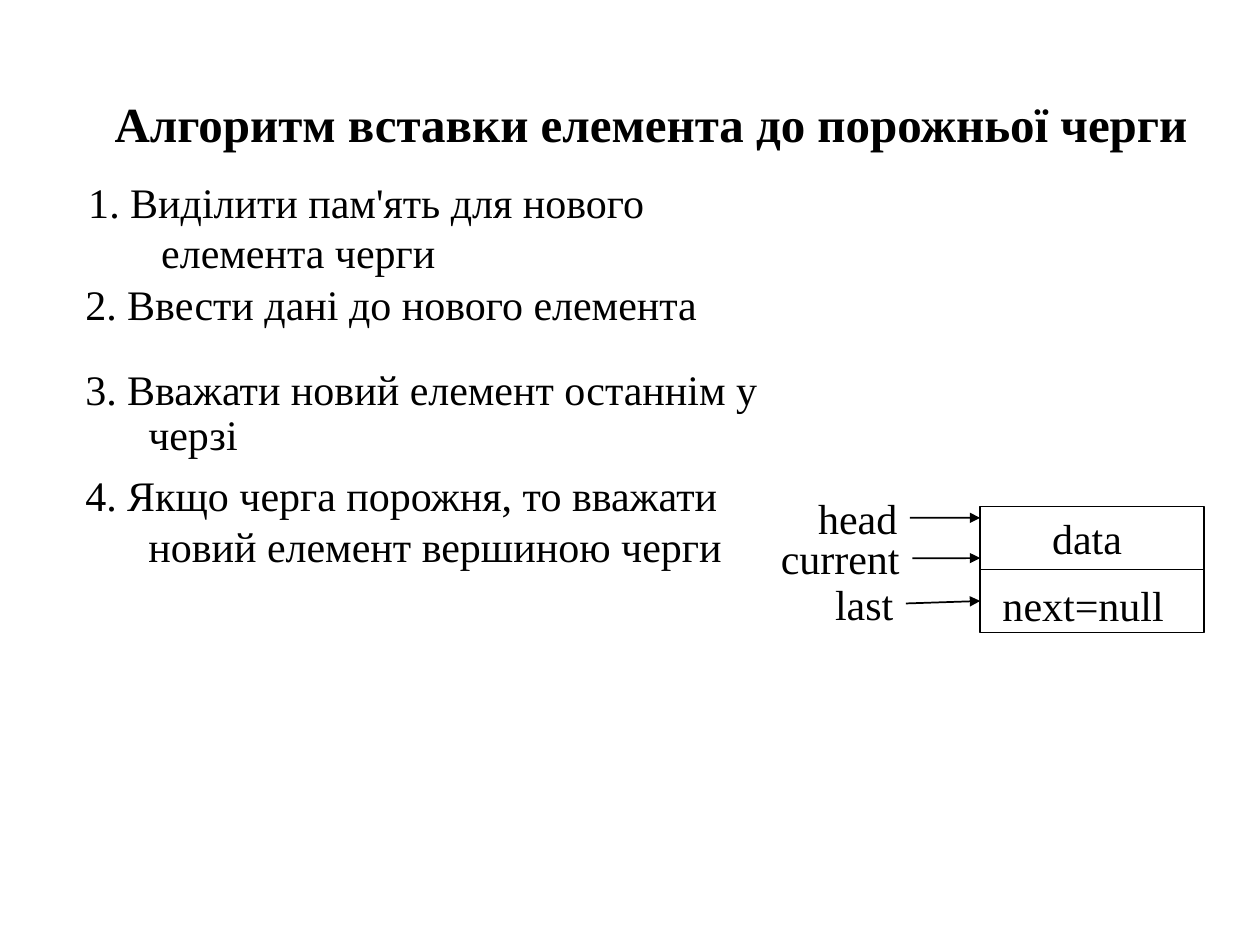
from dataclasses import dataclass
from lxml.etree import SubElement
from pptx import Presentation
from pptx.dml.color import RGBColor
from pptx.enum.shapes import MSO_CONNECTOR, MSO_SHAPE
from pptx.enum.text import MSO_ANCHOR, PP_ALIGN
from pptx.oxml.ns import qn
from pptx.slide import Slide
from pptx.util import Cm, Pt

BLACK = RGBColor(0, 0, 0)
TOP, LEFT, RIGHT = 0, 1, 3


@dataclass
class SlideBuilder:
    """Draw text, boxes and arrows on one slide in a shared style."""

    slide: Slide
    font: str = "Times New Roman"
    size: int = 24
    color: RGBColor = BLACK

    def text(self, text, left, top, width, height, wrap=False,
             align=PP_ALIGN.LEFT, size=None, bold=False):
        shape = self.slide.shapes.add_textbox(Cm(left), Cm(top), Cm(width), Cm(height))
        text_frame = shape.text_frame
        text_frame.word_wrap = wrap
        text_frame.text = text
        paragraph = text_frame.paragraphs[0]
        paragraph.alignment = align
        font = paragraph.runs[0].font
        font.name = self.font
        font.size = Pt(size or self.size)
        font.bold = bold
        font.color.rgb = self.color
        return shape

    def title(self, text, left, top, width, height):
        shape = self.text(text, left, top, width, height, wrap=True,
                          align=PP_ALIGN.CENTER, size=28, bold=True)
        shape.text_frame.vertical_anchor = MSO_ANCHOR.MIDDLE

    def step(self, text, left, top, width, height, inset=0.25,
             margin=2.54, hanging=1.27, spacing=1.0):
        shape = self.text(text, left, top, width, height, wrap=True)
        text_frame = shape.text_frame
        text_frame.margin_left = text_frame.margin_right = Cm(inset)
        paragraph = text_frame.paragraphs[0]
        paragraph.line_spacing = spacing
        properties = paragraph._p.get_or_add_pPr()
        properties.set("marL", str(int(Cm(margin))))
        properties.set("indent", str(-int(Cm(hanging))))

    def box(self, left, top, width, height):
        shape = self.slide.shapes.add_shape(
            MSO_SHAPE.RECTANGLE, Cm(left), Cm(top), Cm(width), Cm(height))
        shape.shadow.inherit = False
        shape.fill.background()
        shape.line.color.rgb = self.color
        shape.line.width = Pt(1)
        return shape

    def arrow(self, label, end_x, end_y, target=None):
        connector = self.slide.shapes.add_connector(
            MSO_CONNECTOR.STRAIGHT, label.left + label.width,
            label.top + label.height // 2, Cm(end_x), Cm(end_y))
        connector.begin_connect(label, RIGHT)
        if target is not None:
            connector.end_connect(target, LEFT)
        connector.line.color.rgb = self.color
        connector.line.width = Pt(1)
        line = connector.line._get_or_add_ln()
        SubElement(line, qn("a:tailEnd"), type="triangle")
        SubElement(connector._element.spPr, qn("a:effectLst"))


def main():
    presentation = Presentation()
    presentation.slide_width = Cm(25.4)
    presentation.slide_height = Cm(19.05)
    builder = SlideBuilder(presentation.slides.add_slide(presentation.slide_layouts[6]))

    builder.title("Алгоритм вставки елемента до порожньої черги", 1.9, 1.52, 22.45, 1.9)
    builder.step("1. Виділити пам'ять для нового елемента черги", 0, 3.43, 15.7, 2.54,
                 inset=0.51, margin=2.74, hanging=1.47)
    builder.step("2. Ввести дані до нового елемента", 0.2, 5.61, 15.3, 1.19, spacing=0.9)
    builder.step("3. Вважати новий елемент останнім у черзі", 0.2, 7.32, 15.7, 2.11,
                 spacing=0.9)
    builder.step("4. Якщо черга порожня, то вважати новий елемент вершиною черги",
                 0.2, 9.35, 15.7, 2.31)

    node_left, node_top, node_width, field_height = 19.76, 10.21, 4.52, 1.27
    next_top = node_top + field_height
    builder.box(node_left, node_top, node_width, field_height)
    next_box = builder.box(node_left, next_top, node_width, field_height)
    builder.text("data", 20.96, node_top, 1.93, field_height)
    builder.text("next=null", 19.96, 11.56, 3.78, field_height)

    pointers = [
        ("head", 16.23, 9.8, 2.11, PP_ALIGN.RIGHT, 10.44, None),
        ("current", 15.49, 10.62, 2.9, PP_ALIGN.LEFT, 11.25, None),
        ("last", 16.56, 11.53, 1.7, PP_ALIGN.RIGHT, 12.12, next_box),
    ]
    for name, left, top, width, align, end_y, target in pointers:
        label = builder.text(name, left, top, width, field_height, align=align)
        builder.arrow(label, node_left, end_y, target)

    presentation.save("out.pptx")


if __name__ == "__main__":
    main()
